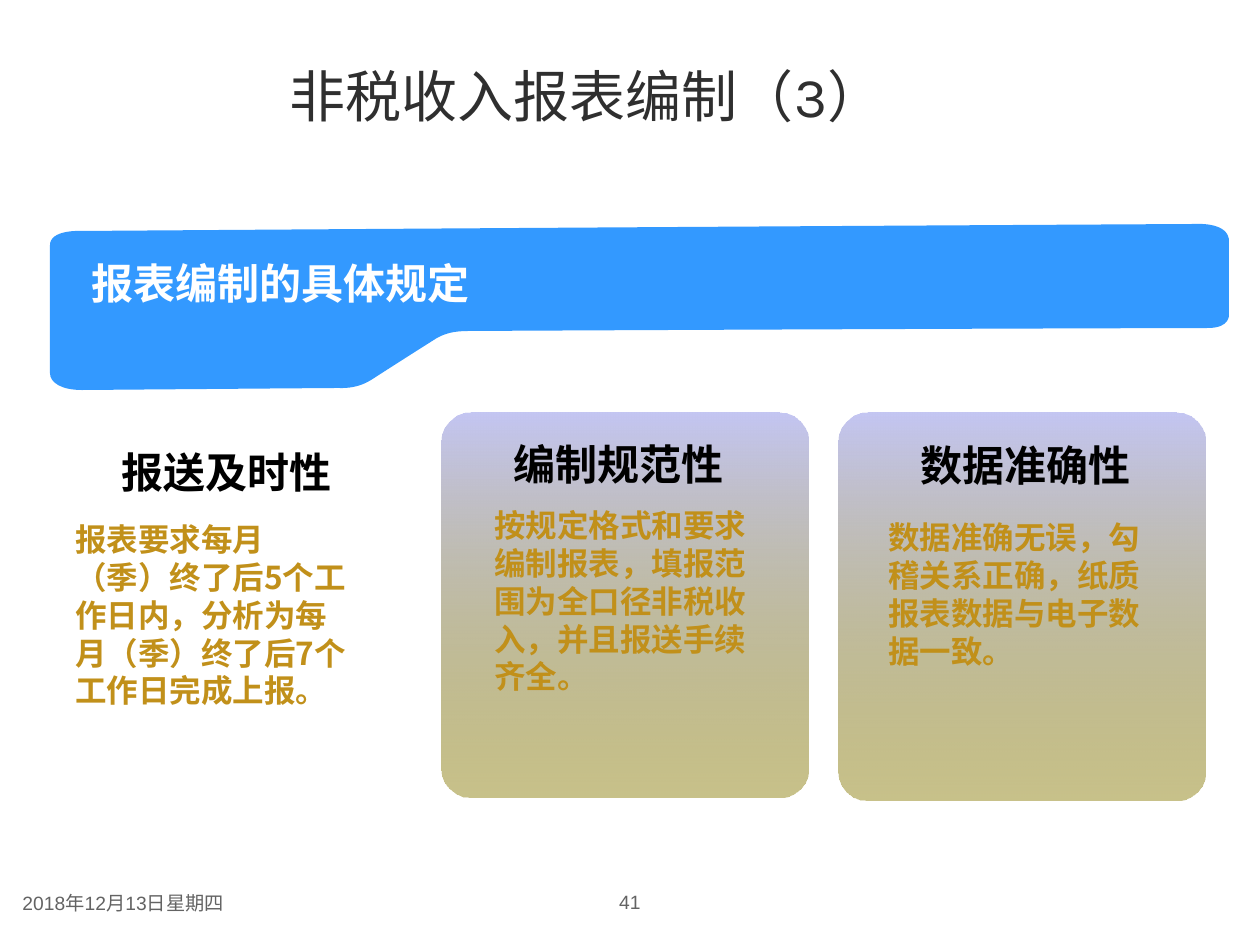
from lxml.etree import SubElement
from pptx import Presentation
from pptx.dml.color import RGBColor
from pptx.enum.shapes import MSO_SHAPE
from pptx.enum.text import MSO_ANCHOR, PP_ALIGN
from pptx.oxml.ns import qn
from pptx.util import Pt

SCALE = 914400 / 126
CHINESE_FONT = "Noto Sans CJK SC"
BANNER_START = (1158, 104)
BANNER_CURVES = [
    ((788, 105), (419, 107), (419, 107)),
    ((405, 107), (396, 109), (387, 114)),
    ((360, 131), (332, 149), (332, 149)),
    ((322, 155), (312, 165), (288, 164)),
    ((159, 165), (32, 166), (32, 166)),
    ((12, 166), (0, 159), (0, 149)),
    ((0, 85), (0, 22), (0, 22)),
    ((-1, 5), (32, 7), (32, 7)),
    ((589, 3), (1147, 0), (1147, 0)),
    ((1147, 0), (1180, -2), (1179, 18)),
    ((1179, 53), (1179, 90), (1179, 90)),
    ((1179, 90), (1181, 104), (1158, 104)),
]


def px(length):
    return round(length * SCALE)


def color(value):
    return RGBColor.from_string(value)


def add_text(slide, box, text, size=24, font="Arial", fill="000000", bold=False,
             align=PP_ALIGN.LEFT, anchor=MSO_ANCHOR.TOP):
    shape = slide.shapes.add_textbox(*map(px, box))
    frame = shape.text_frame
    frame.word_wrap = True
    frame.vertical_anchor = anchor
    paragraph = frame.paragraphs[0]
    paragraph.alignment = align
    run = paragraph.add_run()
    run.text = text
    run.font.size = Pt(size)
    run.font.name = font
    run.font.bold = bold
    run.font.color.rgb = color(fill)
    SubElement(run.font._element, qn("a:ea"), typeface=CHINESE_FONT)


def turn_lines_into_curves(shape):
    outline = shape._element.xpath(".//a:path")[0]
    lines = outline.findall(qn("a:lnTo"))
    for first in range(0, len(lines), 3):
        curve = outline.makeelement(qn("a:cubicBezTo"))
        lines[first].addprevious(curve)
        for line in lines[first:first + 3]:
            curve.append(line[0])
            outline.remove(line)


def add_banner(slide, box, text):
    left, top, width, height = box
    start, *points = [(px(left + x), px(top + y))
                      for x, y in [BANNER_START, *sum(BANNER_CURVES, ())]]
    builder = slide.shapes.build_freeform(*start)
    builder.add_line_segments(points, close=True)
    shape = builder.convert_to_shape()
    turn_lines_into_curves(shape)
    shape.shadow.inherit = False
    shape.fill.solid()
    shape.fill.fore_color.rgb = color("3399FF")
    shape.line.fill.background()
    add_text(slide, (left + 29, top + 27, 437, 63), text, fill="FFFFFF", bold=True)


def add_panel(slide, box):
    shape = slide.shapes.add_shape(MSO_SHAPE.ROUNDED_RECTANGLE, *map(px, box))
    shape.shadow.inherit = False
    shape.adjustments[0] = 0.08
    shape.line.fill.background()
    shape.fill.gradient()
    shape.fill.gradient_angle = 270
    for stop, position, value in zip(shape.fill.gradient_stops, (0, 1), ("C4C6F2", "918415")):
        stop.position = position
        stop.color.rgb = color(value)
    end_color = shape._element.xpath(".//a:gs/a:srgbClr")[-1]
    SubElement(end_color, qn("a:alpha"), val="50000")


def add_card(slide, box, heading, body, heading_box, body_box, panel=True):
    left, top = box[:2]
    if panel:
        add_panel(slide, box)
    for text, (x, y, width, height), style in (
        (heading, heading_box, {}),
        (body, body_box, {"size": 18, "font": CHINESE_FONT, "fill": "C1901A"}),
    ):
        add_text(slide, (left + x, top + y, width, height), text, bold=True, **style)


def add_footer(slide, box):
    left, top, width, height = box
    style = {"size": 11, "fill": "636363"}
    add_text(slide, (left, top, 441, height), "2018年12月13日星期四",
             anchor=MSO_ANCHOR.BOTTOM, **style)
    add_text(slide, (left + (width - 126) // 2, top, 126, height), "41",
             align=PP_ALIGN.CENTER, anchor=MSO_ANCHOR.MIDDLE, **style)


def main():
    presentation = Presentation()
    presentation.slide_width = px(1260)
    presentation.slide_height = px(945)
    slide = presentation.slides.add_slide(presentation.slide_layouts[6])
    add_text(slide, (-2, 16, 1177, 158), "非税收入报表编制（3）", size=32, font="Karla",
             fill="2F2F2F", align=PP_ALIGN.CENTER, anchor=MSO_ANCHOR.MIDDLE)
    add_banner(slide, (50, 224, 1180, 165), "报表编制的具体规定")
    add_card(slide, (50, 413, 367, 384), "报送及时性",
             "报表要求每月（季）终了后5个工作日内，分析为每月（季）终了后7个工作日完成上报。",
             (59, 27, 270, 64), (13, 101, 300, 204), panel=False)
    add_card(slide, (442, 413, 367, 384), "编制规范性",
             "按规定格式和要求编制报表，填报范围为全口径非税收入，并且报送手续齐全。",
             (59, 19, 267, 63), (40, 87, 286, 202))
    add_card(slide, (839, 413, 367, 387), "数据准确性",
             "数据准确无误，勾稽关系正确，纸质报表数据与电子数据一致。",
             (69, 20, 273, 63), (37, 99, 284, 164))
    add_footer(slide, (10, 882, 1240, 39))
    presentation.save("out.pptx")


if __name__ == "__main__":
    main()
